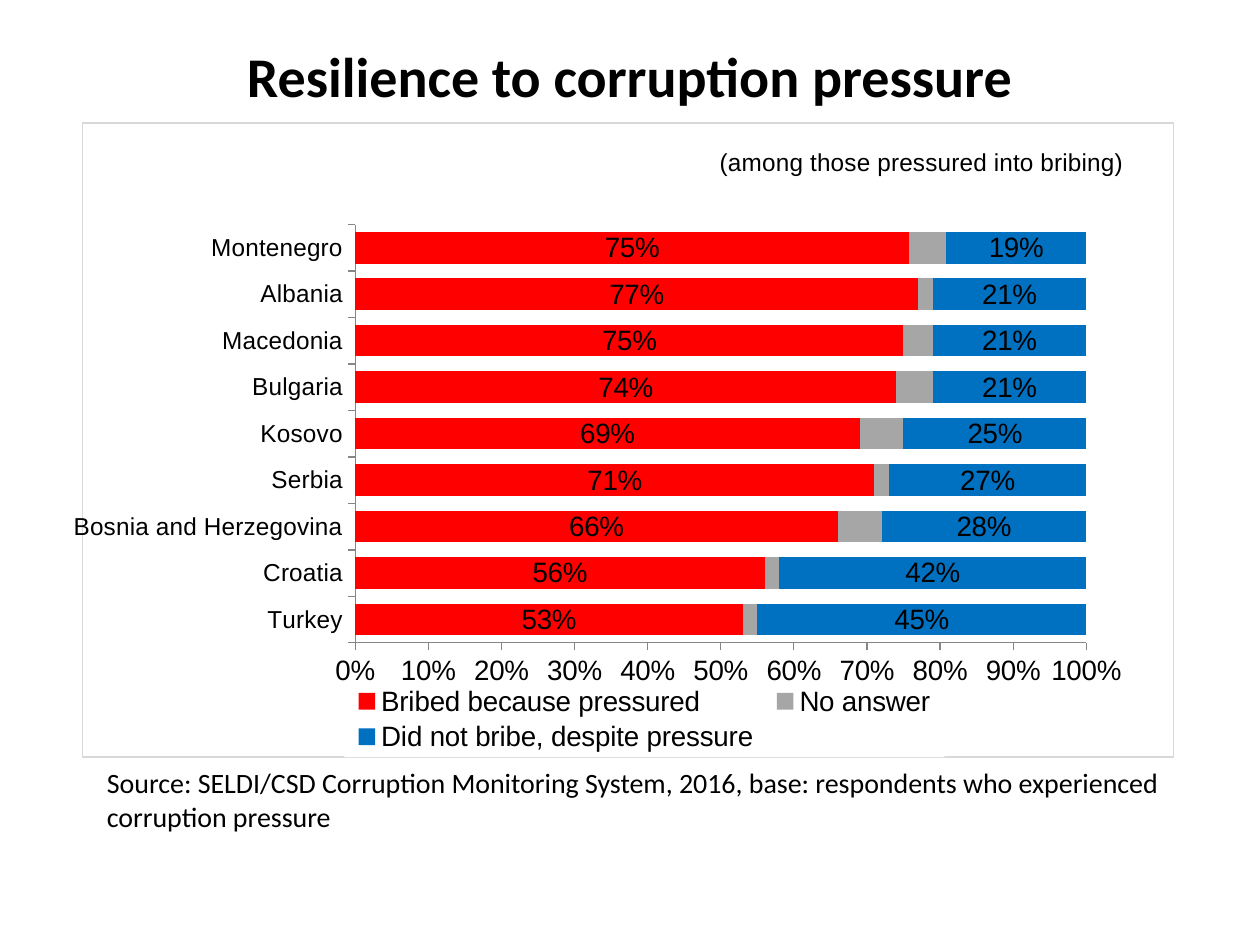
from dataclasses import dataclass

from lxml.etree import fromstring
from pptx import Presentation
from pptx.chart.data import CategoryChartData as Data
from pptx.dml.color import RGBColor as Color
from pptx.enum.chart import XL_CHART_TYPE as Kind
from pptx.enum.chart import XL_LABEL_POSITION as Spot
from pptx.enum.chart import XL_LEGEND_POSITION as Side
from pptx.enum.chart import XL_TICK_MARK as Tick
from pptx.enum.text import MSO_ANCHOR as Anchor
from pptx.enum.text import PP_ALIGN as Align
from pptx.oxml.ns import qn
from pptx.util import Pt

SPACE = (
    'xmlns:c="http://schemas.openxmlformats.org/drawingml/2006/chart" '
    'xmlns:a="http://schemas.openxmlformats.org/drawingml/2006/main"'
)


@dataclass(frozen=True)
class Theme:
    ink: str = "000000"
    paper: str = "FFFFFF"
    frame: str = "D9D9D9"
    axis: str = "868686"
    bribed: str = "FF0000"
    silent: str = "A6A6A6"
    firm: str = "0070C0"
    head: int = 32
    body: int = 16
    small: int = 14
    text: str = "Calibri"
    plot: str = "Arial"


def layout(x, y, w=None, h=None, inner=False):
    parts = [("xMode", "edge"), ("yMode", "edge"), ("x", x), ("y", y)]
    if inner:
        parts.insert(0, ("layoutTarget", "inner"))
    if w is not None:
        parts += [("w", w), ("h", h)]
    body = "".join(f'<c:{tag} val="{val}"/>' for tag, val in parts)
    return fromstring(f"<c:layout {SPACE}><c:manualLayout>{body}</c:manualLayout></c:layout>")


def place(node, index, *spot, inner=False):
    for old in node.findall(qn("c:layout")):
        node.remove(old)
    node.insert(index, layout(*spot, inner=inner))


def paint(fill, line=None):
    edge = f'<a:solidFill><a:srgbClr val="{line}"/></a:solidFill>' if line else "<a:noFill/>"
    return fromstring(
        f'<c:spPr {SPACE}><a:solidFill><a:srgbClr val="{fill}"/></a:solidFill>'
        f'<a:ln w="{Pt(0.75)}">{edge}</a:ln></c:spPr>'
    )


class Deck:
    def __init__(self, theme):
        self.theme = theme
        self.file = Presentation()
        self.file.slide_width, self.file.slide_height = Pt(720), Pt(540)
        self.slide = self.file.slides.add_slide(self.file.slide_layouts[6])

    def style(self, font, size, name, bold=False):
        font.size, font.name, font.bold = Pt(size), name, bold
        font.color.rgb = Color.from_string(self.theme.ink)

    def text(self, box, words, size, bold=False, align=Align.LEFT, anchor=Anchor.TOP):
        frame = self.slide.shapes.add_textbox(*map(Pt, box)).text_frame
        frame.word_wrap = True
        frame.vertical_anchor = anchor
        para = frame.paragraphs[0]
        para.alignment = align
        run = para.add_run()
        run.text = words
        self.style(run.font, size, self.theme.text, bold)

    def axis(self, axis, size):
        axis.has_major_gridlines = False
        axis.major_tick_mark = Tick.OUTSIDE
        axis.minor_tick_mark = Tick.NONE
        axis.format.line.color.rgb = Color.from_string(self.theme.axis)
        axis.format.line.width = Pt(0.75)
        self.style(axis.tick_labels.font, size, self.theme.plot)

    def caption(self, chart, words):
        chart.has_title = True
        run = chart.chart_title.text_frame.paragraphs[0].add_run()
        run.text = words
        self.style(run.font, self.theme.small, self.theme.plot)
        place(chart.chart_title._element, 1, 0.58, 0.03)

    def legend(self, chart):
        chart.has_legend = True
        chart.legend.position = Side.BOTTOM
        chart.legend.include_in_layout = False
        self.style(chart.legend.font, self.theme.body, self.theme.plot)
        node = chart.legend._element
        place(node, 1, 0.24, 0.88, 0.55, 0.12)
        node.find(qn("c:overlay")).addnext(paint(self.theme.paper))

    def bars(self, box, title, names, rows):
        data = Data(number_format="0%")
        data.categories = names
        for name, vals, *_ in rows:
            data.add_series(name, vals)
        shape = self.slide.shapes.add_chart(Kind.BAR_STACKED_100, *map(Pt, box), data)
        chart = shape.chart
        self.style(chart.font, self.theme.body, self.theme.plot)
        self.caption(chart, title)
        self.legend(chart)
        self.axis(chart.category_axis, self.theme.small)
        self.axis(chart.value_axis, self.theme.body)
        chart.value_axis.maximum_scale = 1
        chart.value_axis.major_unit = 0.1
        chart.value_axis.tick_labels.number_format = "0%"
        chart.value_axis.tick_labels.number_format_is_linked = False

        plot = chart.plots[0]
        plot.gap_width, plot.overlap = 47, 100
        plot.vary_by_categories = False
        for line, (_, _, tint, shown) in zip(plot.series, rows):
            line.format.fill.solid()
            line.format.fill.fore_color.rgb = Color.from_string(tint)
            line.invert_if_negative = False
            if shown:
                tags = line.data_labels
                tags.show_value = True
                tags.position = Spot.CENTER
                tags.number_format = "0%"
                tags.number_format_is_linked = False
                self.style(tags.font, self.theme.body, self.theme.plot)

        core = chart._chartSpace.find(qn("c:chart"))
        place(core.find(qn("c:plotArea")), 0, 0.25, 0.16, 0.67, 0.66, inner=True)
        core.addnext(paint(self.theme.paper, self.theme.frame))


def main():
    theme = Theme()
    deck = Deck(theme)
    deck.text((36, -2, 648, 90), "Resilience to corruption pressure",
              theme.head, True, Align.CENTER, Anchor.MIDDLE)
    deck.text((54, 434, 618, 46),
              "Source: SELDI/CSD Corruption Monitoring System, 2016, "
              "base: respondents who experienced corruption pressure", theme.body)
    names = ["Turkey", "Croatia", "Bosnia and Herzegovina", "Serbia", "Kosovo",
             "Bulgaria", "Macedonia", "Albania", "Montenegro"]
    rows = [
        ("Bribed because pressured",
         (0.53, 0.56, 0.66, 0.71, 0.69, 0.74, 0.75, 0.77, 0.75), theme.bribed, True),
        ("No answer",
         (0.02, 0.02, 0.06, 0.02, 0.06, 0.05, 0.04, 0.02, 0.05), theme.silent, False),
        ("Did not bribe, despite pressure",
         (0.45, 0.42, 0.28, 0.27, 0.25, 0.21, 0.21, 0.21, 0.19), theme.firm, True),
    ]
    deck.bars((42, 70, 629, 363), "(among those pressured into bribing)", names, rows)
    deck.file.save("out.pptx")


if __name__ == "__main__":
    main()
